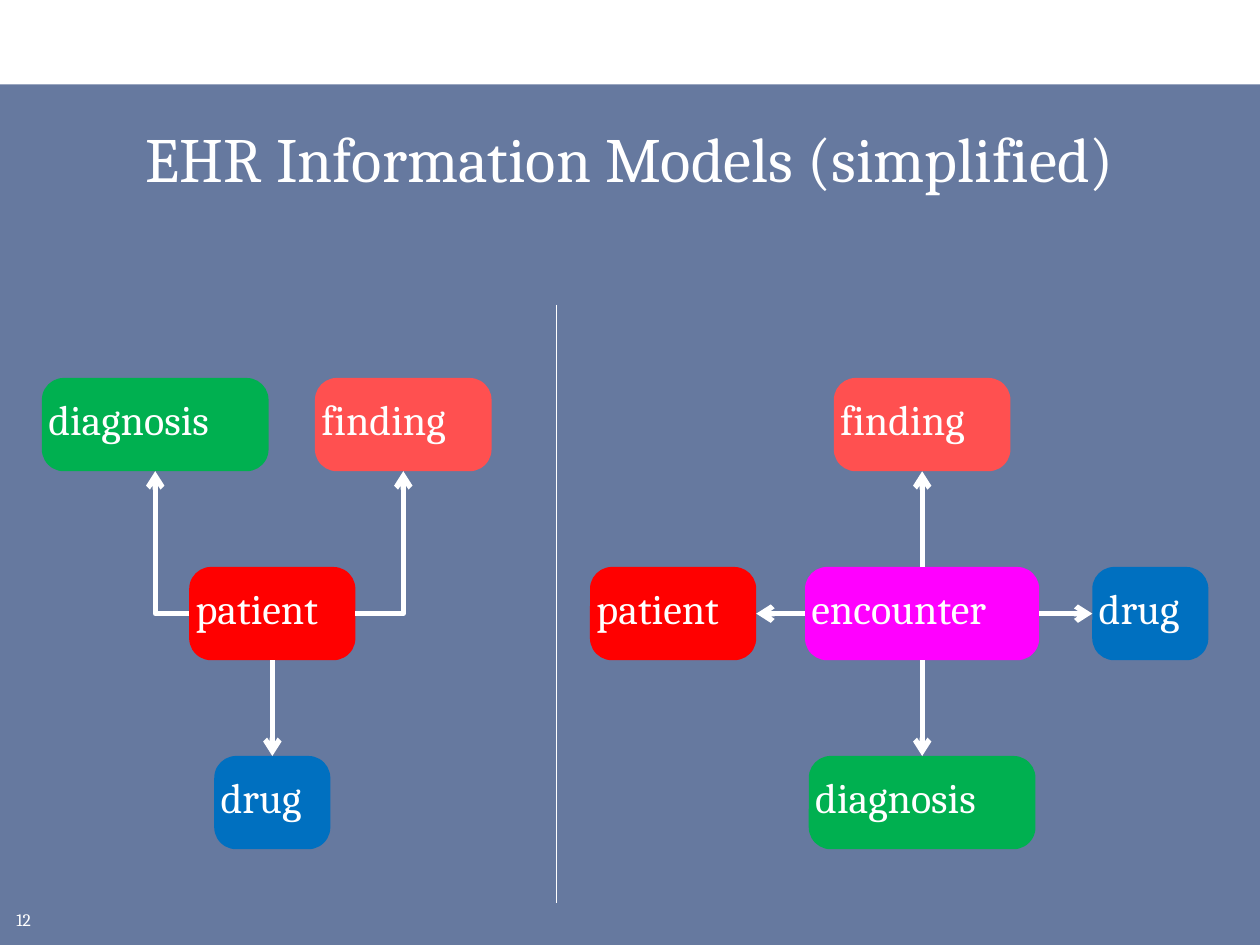
from lxml.etree import SubElement
from pptx import Presentation
from pptx.dml.color import RGBColor as RGB
from pptx.enum.shapes import MSO_CONNECTOR as CONN, MSO_SHAPE as SHAPE
from pptx.enum.text import MSO_ANCHOR as ANCHOR, PP_ALIGN as ALIGN
from pptx.oxml.ns import qn
from pptx.util import Cm, Pt

COLORS = {
    "white": "FFFFFF", "band": "002060", "patient": "FF0000",
    "diagnosis": "00B050", "drug": "0070C0", "finding": "FF5050",
    "encounter": "FF00FF",
}
WIDTHS = {"patient": 3.35, "diagnosis": 4.57, "drug": 2.34,
          "finding": 3.56, "encounter": 4.72}
NODE_H, ROW_STEP = 1.88, 3.81
TOP, LEFT, BOTTOM, RIGHT = range(4)  # connection sites of a node


def color(name):
    return RGB.from_string(COLORS[name])


def set_all(obj, values):
    for name, value in values.items():
        setattr(obj, name, value)


def write(tf, text, size, align=ALIGN.LEFT, **frame):
    set_all(tf, {"word_wrap": True, **frame})
    p = tf.paragraphs[0]
    p.alignment = align
    r = p.add_run()
    r.text = text
    set_all(r.font, {"name": "Cambria", "size": Pt(size)})
    r.font.color.rgb = color("white")


def add_box(s, kind, fill, x, y, w, h):
    sp = s.shapes.add_shape(kind, Cm(x), Cm(y), Cm(w), Cm(h))
    sp.shadow.inherit = False
    sp.fill.solid()
    sp.fill.fore_color.rgb = color(fill)
    sp.line.fill.background()
    return sp


def add_line(s, kind, width, x1=0, y1=0, x2=0, y2=0):
    line = s.shapes.add_connector(kind, Cm(x1), Cm(y1), Cm(x2), Cm(y2))
    line.line.color.rgb = color("white")
    line.line.width = Pt(width)
    SubElement(line._element.spPr, qn("a:effectLst"))
    return line


def add_arrow(s, start, start_site, end, end_site):
    """Join two nodes; sites on different axes give a single bend."""
    bent = start_site % 2 != end_site % 2
    arrow = add_line(s, CONN.ELBOW if bent else CONN.STRAIGHT, 3)
    arrow.begin_connect(start, start_site)
    arrow.end_connect(end, end_site)
    if bent:
        arrow._element.spPr.find(qn("a:prstGeom")).set("prst", "bentConnector2")
    SubElement(arrow.line._get_or_add_ln(), qn("a:tailEnd"), type="arrow")


def add_model(s, x, y, nodes, hub, links):
    """nodes: name -> (centre from x, row); links: (hub site, name, site)."""
    placed = {}
    for name, (center, row) in nodes.items():
        w = WIDTHS[name]
        sp = add_box(s, SHAPE.ROUNDED_RECTANGLE, name,
                     x + center - w / 2, y + row * ROW_STEP, w, NODE_H)
        sp.adjustments[0] = 0.235
        write(sp.text_frame, name, 24, vertical_anchor=ANCHOR.MIDDLE,
              margin_left=0, margin_top=0, margin_right=0, margin_bottom=Cm(0.25))
        placed[name] = sp
    for hub_site, name, site in links:
        add_arrow(s, placed[hub], hub_site, placed[name], site)


def add_frame(s, x, y, w, h):
    # Translucent band, behind the title
    band = add_box(s, SHAPE.RECTANGLE, "band", x, y, w, h)
    rgb = band._element.spPr.find(qn("a:solidFill"))[0]
    SubElement(rgb, qn("a:alpha"), val="60000")
    s.shapes._spTree.insert(2, band._element)

    # Title
    title = s.shapes.title
    set_all(title, {"left": Cm(x + 0.64), "top": Cm(y + 0.42),
                    "width": Cm(w - 1.28), "height": Cm(2.12)})
    write(title.text_frame, "EHR Information Models (simplified)", 36,
          ALIGN.CENTER, vertical_anchor=ANCHOR.MIDDLE)

    # Slide number
    number = s.shapes.add_textbox(Cm(x + 0.08), Cm(y + h - 0.84), Cm(1), Cm(0.64))
    write(number.text_frame, "12", 10)


def main():
    prs = Presentation()
    set_all(prs, {"slide_width": Cm(25.4), "slide_height": Cm(19.05)})
    s = prs.slides.add_slide(prs.slide_layouts[5])
    add_frame(s, 0, 1.7, 25.4, 17.35)

    # Patient-centred model
    add_model(s, 0.84, 7.62,
              {"patient": (4.65, 1), "diagnosis": (2.29, 0),
               "drug": (4.65, 2), "finding": (7.29, 0)},
              "patient",
              [(LEFT, "diagnosis", BOTTOM), (RIGHT, "finding", BOTTOM),
               (BOTTOM, "drug", TOP)])

    # Encounter-centred model
    add_model(s, 11.89, 7.62,
              {"encounter": (6.7, 1), "patient": (1.68, 1),
               "diagnosis": (6.7, 2), "drug": (11.3, 1), "finding": (6.7, 0)},
              "encounter",
              [(BOTTOM, "diagnosis", TOP), (LEFT, "patient", RIGHT),
               (TOP, "finding", BOTTOM), (RIGHT, "drug", LEFT)])

    # Divider
    add_line(s, CONN.STRAIGHT, 0.75, 11.22, 6.14, 11.22, 18.2)
    prs.save("out.pptx")


if __name__ == "__main__":
    main()
